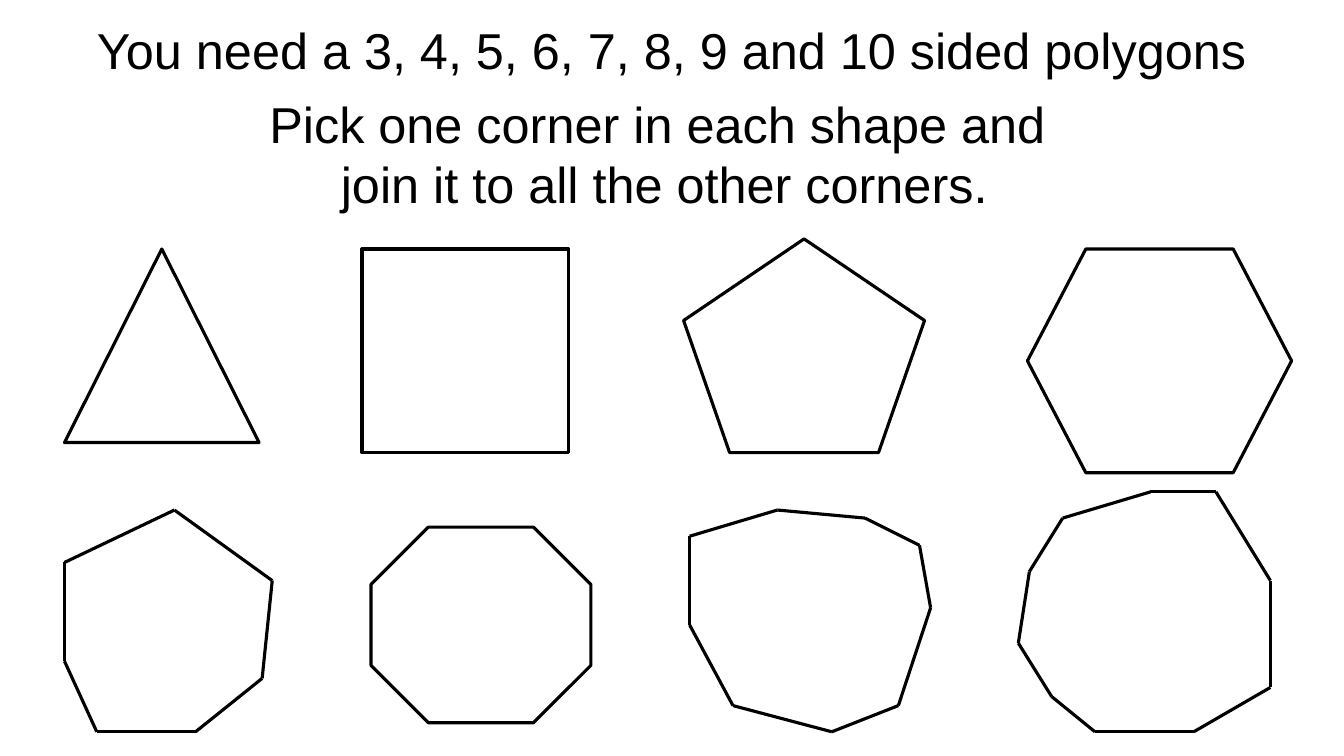
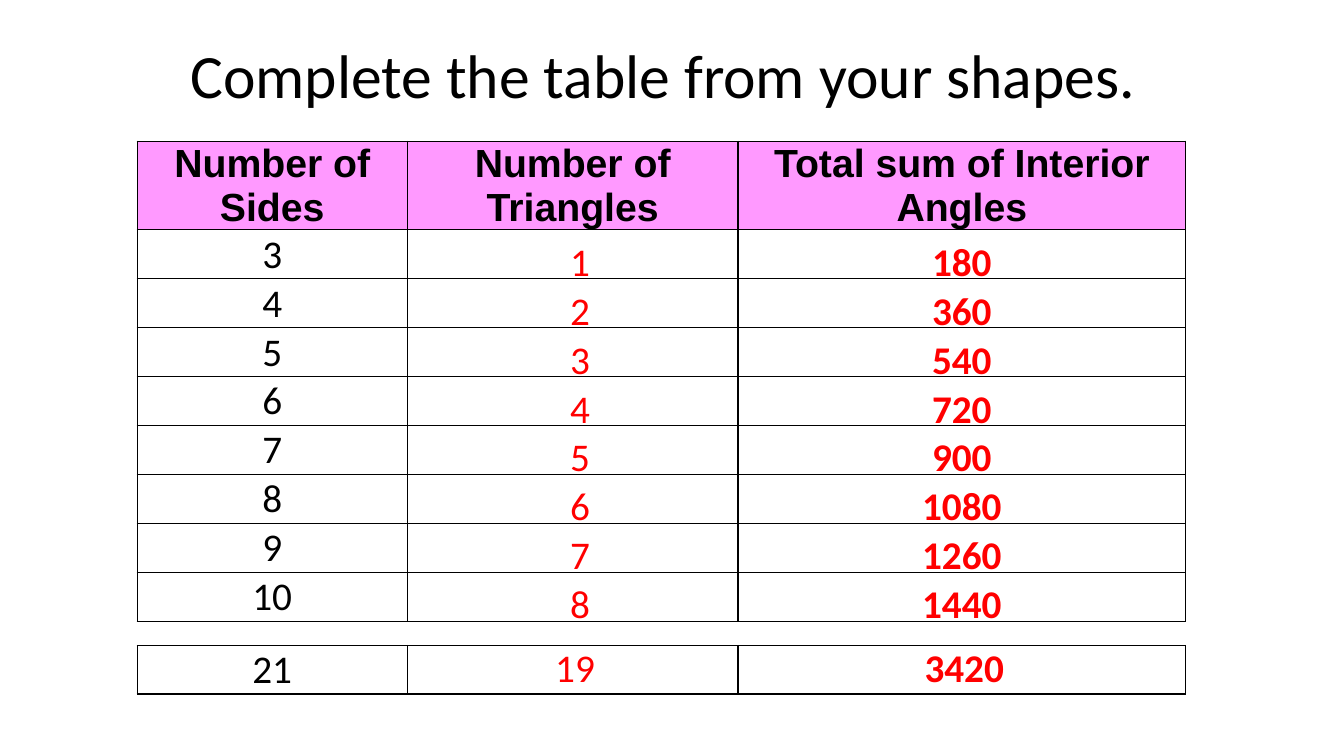
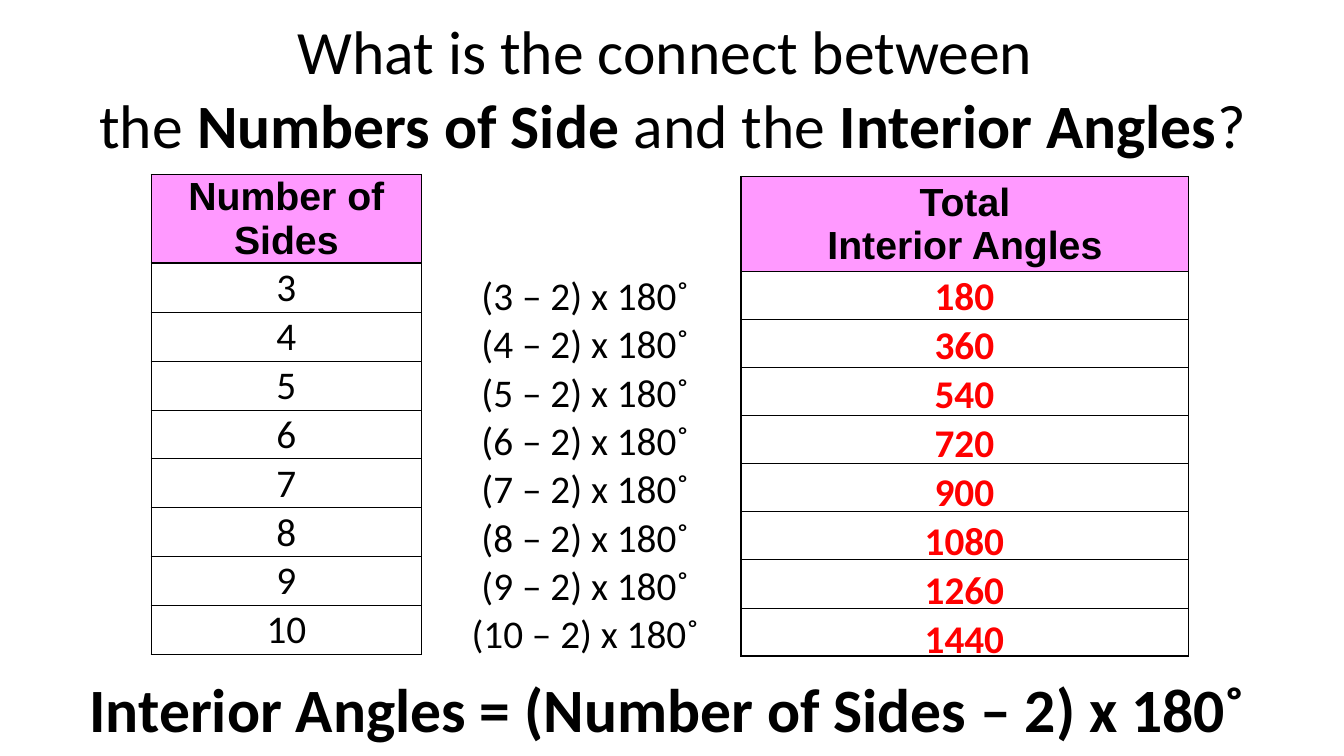
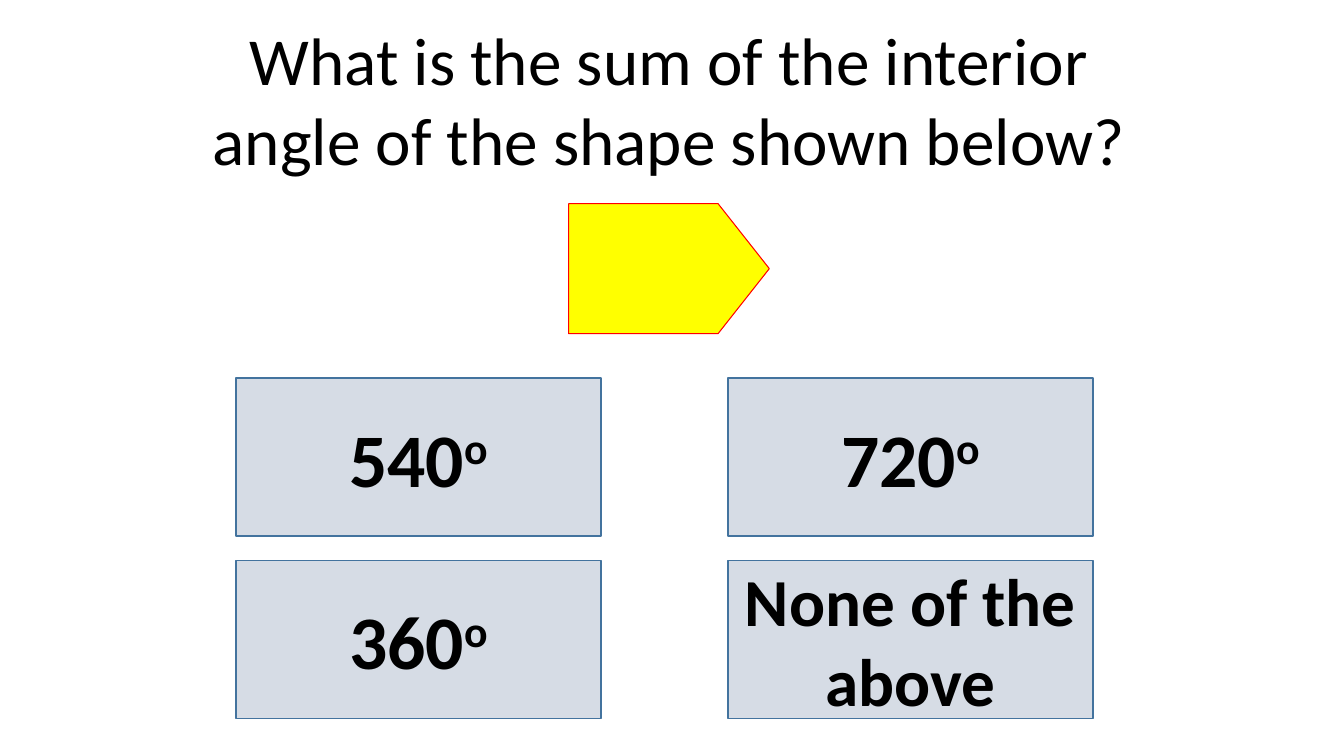
import dataclasses

import pptx
import pptx.dml.color
import pptx.enum.dml
import pptx.enum.shapes
import pptx.enum.text
import pptx.oxml
import pptx.oxml.ns
import pptx.util
from pptx.util import Inches

RGBColor = pptx.dml.color.RGBColor
SHAPES = pptx.enum.shapes.MSO_SHAPE
ANCHOR = pptx.enum.text.MSO_ANCHOR
CENTER = pptx.enum.text.PP_ALIGN.CENTER

BLACK = RGBColor(0x00, 0x00, 0x00)
WHITE = RGBColor(0xFF, 0xFF, 0xFF)
RED = RGBColor(0xFF, 0x00, 0x00)
YELLOW = RGBColor(0xFF, 0xFF, 0x00)
PINK = RGBColor(0xFF, 0x99, 0xFF)
PALE_BLUE = RGBColor(0xD6, 0xDC, 0xE5)
STEEL_BLUE = RGBColor(0x43, 0x73, 0x9E)

TITLE_ONLY = 5
OUTLINE = 2.25
HEAVY, THIN = 1, 0.5
SIDES = range(3, 11)
COLUMN_WIDTHS = [2.68, 3.28, 4.44]


@dataclasses.dataclass
class CellLook:
    """Type and anchor of a kind of table cell."""

    font: str = "Calibri"
    color: RGBColor = BLACK
    bold: bool = False
    anchor: object = ANCHOR.BOTTOM


HEADING = CellLook("Arial", BLACK, True, ANCHOR.MIDDLE)
GIVEN = CellLook()
COUNT = CellLook(color=RED, anchor=ANCHOR.MIDDLE)
ANGLE = CellLook(color=RED, bold=True, anchor=ANCHOR.MIDDLE)


def angle_sum(sides):
    """Return the interior angle sum of a polygon in degrees."""
    return (sides - 2) * 180


def style_text(frame, size, font="Calibri", bold=None, color=BLACK):
    """Centre the paragraphs and format every run."""
    for paragraph in frame.paragraphs:
        paragraph.alignment = CENTER
        for run in paragraph.runs:
            run.font.size = pptx.util.Pt(size)
            run.font.name = font
            run.font.color.rgb = color
            if bold is not None:
                run.font.bold = bold


def put_title(slide, box, text, size, font="Calibri"):
    """Place the slide title and return its text frame."""
    title = slide.shapes.title
    title.left, title.top, title.width, title.height = map(Inches, box)
    frame = title.text_frame
    frame.word_wrap = True
    frame.auto_size = pptx.enum.text.MSO_AUTO_SIZE.NONE
    frame.vertical_anchor = ANCHOR.TOP
    frame.text = text
    style_text(frame, size, font)
    return frame


def put_text(slide, box, text, size, font="Calibri", bold=False):
    """Place a wrapped, centred text box."""
    frame = slide.shapes.add_textbox(*map(Inches, box)).text_frame
    frame.word_wrap = True
    frame.text = text
    style_text(frame, size, font, bold)


def put_shape(shapes, kind, box, line, weight, fill=None, adjustment=None):
    """Place a preset shape with its outline and optional fill."""
    shape = shapes.add_shape(kind, *map(Inches, box))
    shape.shadow.inherit = False
    if adjustment is not None:
        shape.adjustments[0] = adjustment
    if fill is None:
        shape.fill.background()
    else:
        shape.fill.solid()
        shape.fill.fore_color.rgb = fill
    shape.line.color.rgb = line
    shape.line.width = pptx.util.Pt(weight)
    return shape


def put_polygon(shapes, left, top, corners):
    """Draw a polygon side by side from corners relative to its box."""
    points = [(Inches(left + x), Inches(top + y)) for x, y in corners]
    for start, end in zip(points, points[1:] + points[:1]):
        side = shapes.add_connector(
            pptx.enum.shapes.MSO_CONNECTOR.STRAIGHT, *start, *end)
        side.line.color.rgb = BLACK
        side.line.width = pptx.util.Pt(OUTLINE)
        pptx.oxml.ns.qn("a:effectLst")
        side._element.spPr.append(pptx.oxml.parse_xml(
            f"<a:effectLst {pptx.oxml.ns.nsdecls('a')}/>"))


def set_borders(cell, weights):
    """Set left, right, top and bottom borders; None hides a border."""
    properties = cell._tc.get_or_add_tcPr()
    for position, (side, weight) in enumerate(zip("LRTB", weights)):
        if weight is None:
            width, paint = 0, "<a:noFill/>"
        else:
            width = pptx.util.Pt(weight)
            paint = f'<a:solidFill><a:srgbClr val="{BLACK}"/></a:solidFill>'
        properties.insert(position, pptx.oxml.parse_xml(
            f'<a:ln{side} {pptx.oxml.ns.nsdecls("a")} w="{width}">'
            f"{paint}</a:ln{side}>"))


def fill_cell(cell, text, look):
    """Write one table cell in the given look."""
    cell.margin_left = cell.margin_right = cell.margin_top = Inches(0.01)
    cell.margin_bottom = 0
    cell.vertical_anchor = look.anchor
    cell.text_frame.text = str(text)
    style_text(cell.text_frame, 28, look.font, look.bold, look.color)


def put_table(slide, box, widths, rows, looks, heading_height=0, ruled=True):
    """Place a table, ruled on white or as clear text over another one."""
    headed = heading_height > 0
    table = slide.shapes.add_table(
        len(rows), len(widths), *map(Inches, box)).table
    table.first_row = table.horz_banding = False
    for column, width in zip(table.columns, widths):
        column.width = Inches(width)
    body_height = (box[3] - heading_height) / (len(rows) - headed)
    for r, values in enumerate(rows):
        is_heading = headed and r == 0
        table.rows[r].height = Inches(
            heading_height if is_heading else body_height)
        top = HEAVY if headed and r < 2 else THIN
        bottom = HEAVY if is_heading or r == len(rows) - 1 else THIN
        for c, (value, look) in enumerate(zip(values, looks)):
            cell = table.cell(r, c)
            if value != "":
                fill_cell(cell, value, HEADING if is_heading else look)
            if ruled:
                cell.fill.solid()
                cell.fill.fore_color.rgb = PINK if is_heading else WHITE
                set_borders(cell, (HEAVY, HEAVY, top, bottom))
            else:
                cell.fill.background()
                set_borders(cell, (None,) * 4)


def put_answer(slide, box, text, degrees):
    """Place one answer box, with a raised degree sign for numbers."""
    answer = put_shape(
        slide.shapes, SHAPES.RECTANGLE, box, STEEL_BLUE, 1, PALE_BLUE)
    frame = answer.text_frame
    frame.word_wrap = True
    frame.vertical_anchor = ANCHOR.MIDDLE
    frame.text = text
    if degrees:
        sign = frame.paragraphs[0].add_run()
        sign.text = "o"
        sign._r.get_or_add_rPr().set("baseline", "30000")
    style_text(frame, 54 if degrees else 48, bold=True)


def build_polygons(slide):
    """Build the slide of polygons with three to ten sides."""
    put_title(slide, (0, 0.14, 13.33, 0.71),
              "You need a 3, 4, 5, 6, 7, 8, 9 and 10 sided polygons",
              36, "Arial")
    upper = slide.shapes.add_group_shape().shapes
    for kind, box, adjustment in (
        (SHAPES.ISOSCELES_TRIANGLE, (0.64, 2.47, 1.93, 1.92), None),
        (SHAPES.RECTANGLE, (3.59, 2.47, 2.05, 2.02), None),
        (SHAPES.REGULAR_PENTAGON, (6.78, 2.37, 2.39, 2.12), None),
        (SHAPES.HEXAGON, (10.19, 2.47, 2.62, 2.22), 0.261),
    ):
        put_shape(upper, kind, box, BLACK, OUTLINE, adjustment=adjustment)
    lower = slide.shapes.add_group_shape().shapes
    put_shape(lower, SHAPES.OCTAGON, (3.68, 5.23, 2.18, 1.94), BLACK, OUTLINE)
    put_polygon(lower, 0.64, 5.06, [
        (0, 1.5), (0.32, 2.2), (1.3, 2.2), (1.96, 1.67),
        (2.06, 0.7), (1.09, 0), (0, 0.52)])
    put_polygon(lower, 6.84, 5.06, [
        (0, 0.26), (0, 1.14), (0.43, 1.94), (1.41, 2.2), (2.07, 1.94),
        (2.39, 0.97), (2.28, 0.35), (1.74, 0.08), (0.87, 0)])
    put_polygon(lower, 10.1, 4.88, [
        (0.76, 2.38), (1.74, 2.38), (2.5, 1.94), (2.5, 0.88), (1.96, 0),
        (1.31, 0), (0.44, 0.26), (0.11, 0.79), (0, 1.5), (0.33, 2.03)])
    put_text(slide, (2.53, 0.87, 8.12, 1.31),
             "Pick one corner in each shape and \n"
             "join it to all the other corners.", 36, "Arial")


def build_angle_table(slide):
    """Build the slide with the table of sides, triangles and angles."""
    put_title(slide, (1.46, 0.32, 10.38, 0.84),
              "Complete the table from your shapes. ", 44)
    headings = ("Number of Sides", "Number of Triangles",
                "Total sum of Interior Angles")
    put_table(slide, (1.36, 1.4, 10.4, 4.76), COLUMN_WIDTHS,
              [headings] + [(n, "", "") for n in SIDES],
              [GIVEN] * 3, heading_height=0.88)
    put_table(slide, (4.08, 2.36, 7.66, 3.82), [3.26, 4.4],
              [(f" {n - 2}", angle_sum(n)) for n in SIDES],
              [COUNT, ANGLE], ruled=False)
    put_table(slide, (1.36, 6.4, 10.4, 0.48), COLUMN_WIDTHS,
              [(21, "", "")], [GIVEN] * 3)
    put_table(slide, (4.02, 6.39, 7.72, 0.48), COLUMN_WIDTHS[1:],
              [(" 19", f" {angle_sum(21)}")], [COUNT, ANGLE], ruled=False)


def build_formula(slide):
    """Build the slide linking the number of sides to the angle sum."""
    question = put_title(slide, (0.55, 0.08, 12.24, 1.58),
                         "What is the connect between \nthe ", 44)
    for words, bold in (("Numbers of Side ", True), ("and the ", False),
                        ("Interior Angles", True), ("?", False)):
        run = question.paragraphs[1].add_run()
        run.text = words
        run.font.bold = bold
    style_text(question, 44)
    put_table(slide, (1.5, 1.73, 2.68, 4.76), [2.68],
              [("Number of Sides",)] + [(n,) for n in SIDES],
              [GIVEN], heading_height=0.88)
    put_table(slide, (7.35, 1.75, 4.44, 4.76), [4.44],
              [("Total\nInterior Angles",)] + [("",) for n in SIDES],
              [GIVEN], heading_height=0.94)
    put_table(slide, (7.95, 2.7, 3.23, 3.82), [3.23],
              [(angle_sum(n),) for n in SIDES], [ANGLE], ruled=False)
    for i, n in enumerate(SIDES):
        put_text(slide, (4.25, 2.64 + 0.48 * i, 3.02, 0.57),
                 f" ({n} – 2) x 180˚", 28)
    put_text(slide, (0.55, 6.61, 12.16, 0.84),
             "Interior Angles = (Number of Sides – 2) x 180˚", 44, bold=True)


def build_quiz(slide):
    """Build the multiple-choice question about a pentagon."""
    put_title(slide, (1.87, 0.13, 9.53, 1.72),
              "What is the sum of the interior angle of the shape shown below?",
              48)
    put_shape(slide.shapes, SHAPES.PENTAGON, (5.64, 2.02, 1.99, 1.29),
              RED, 0.75, YELLOW, 0.394)
    answers = (("540", True), ("720", True),
               ("360", True), ("None of the above", False))
    for i, (text, degrees) in enumerate(answers):
        row, column = divmod(i, 2)
        put_answer(slide, (2.34 + 4.88 * column, 3.75 + 1.81 * row,
                           3.62, 1.57), text, degrees)


def main():
    """Build and save the presentation."""
    deck = pptx.Presentation()
    deck.slide_width, deck.slide_height = Inches(13.33), Inches(7.5)
    for build in (build_polygons, build_angle_table, build_formula,
                  build_quiz):
        build(deck.slides.add_slide(deck.slide_layouts[TITLE_ONLY]))
    deck.save("out.pptx")


if __name__ == "__main__":
    main()
